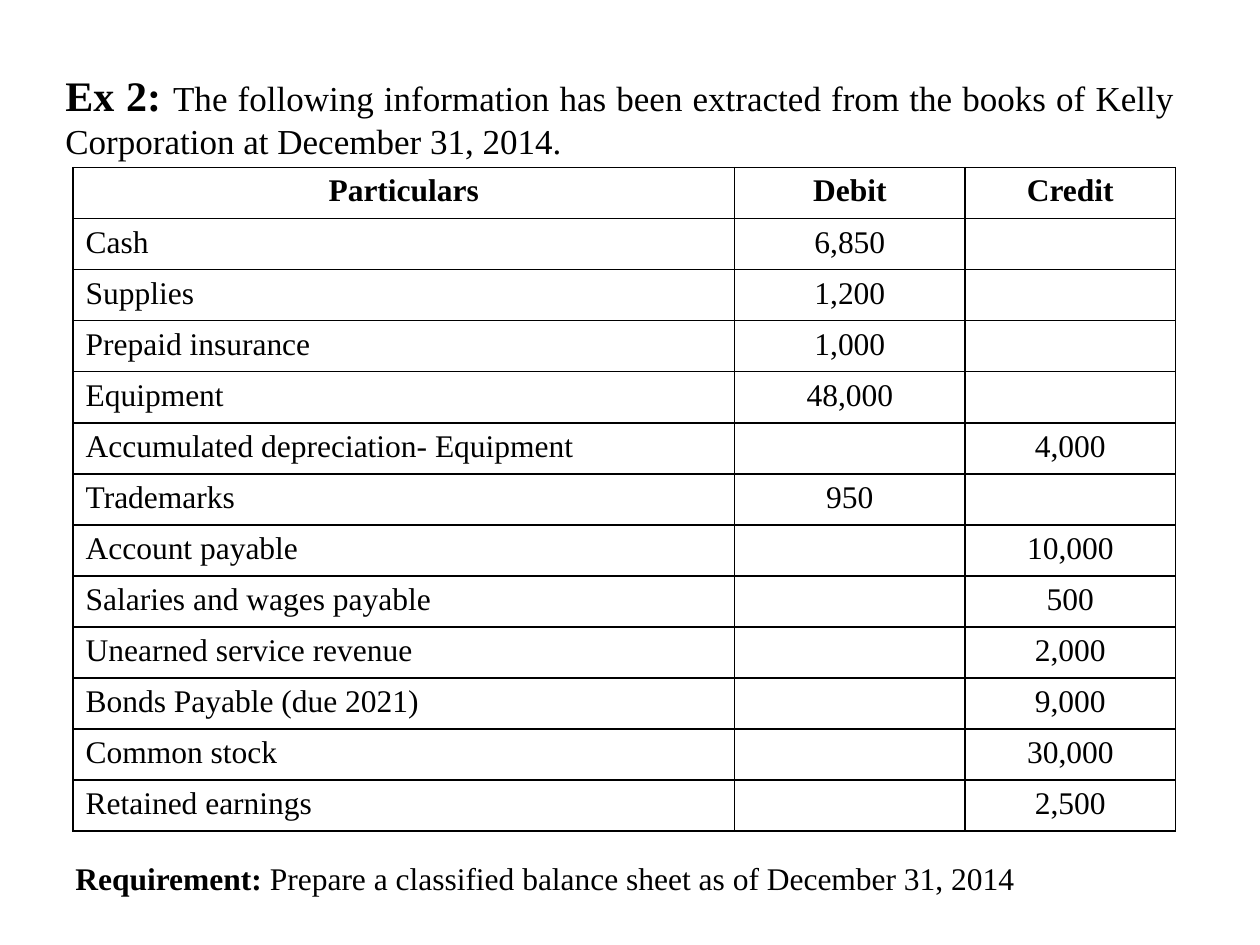
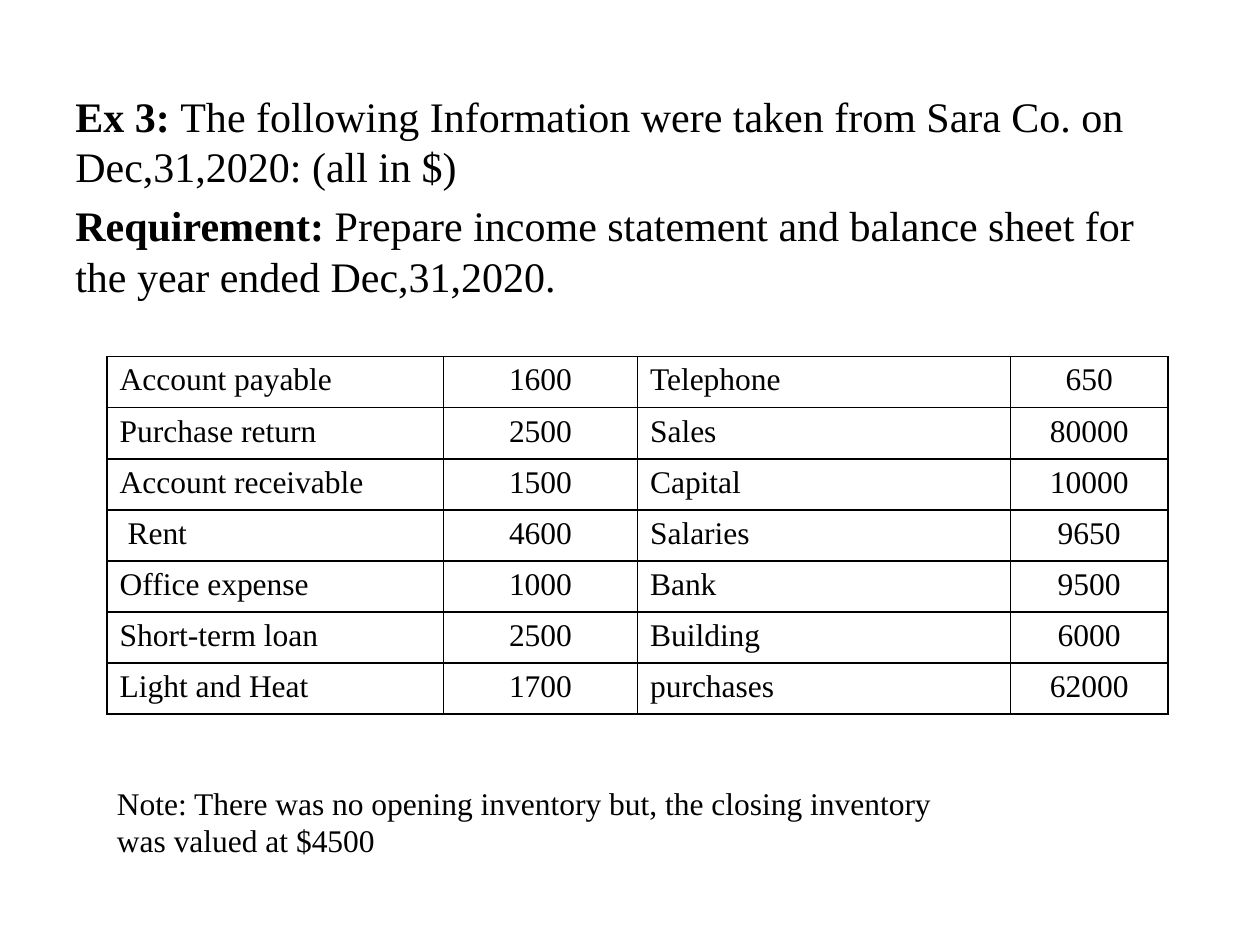
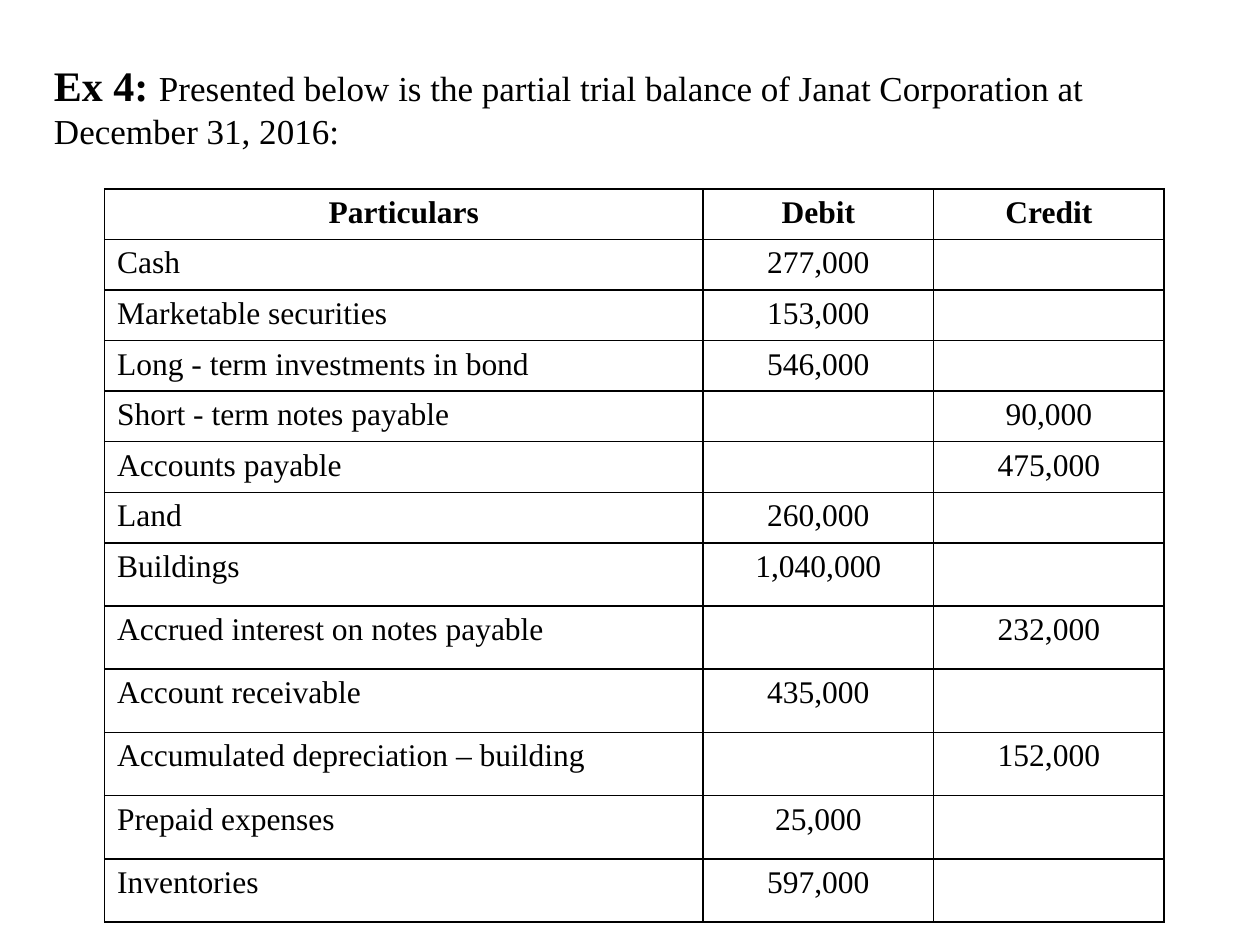
import pptx
import pptx.dml.color
import pptx.enum.text
import pptx.util
from lxml import etree

WIDTH, HEIGHT = 10, 7.5
FONT = "Times New Roman"
INK, PAPER = "000000", "FFFFFF"
LEAD, INTRO, BODY = 24, 20, 18
LEFT, CENTER, JUSTIFY = (
    pptx.enum.text.PP_ALIGN.LEFT,
    pptx.enum.text.PP_ALIGN.CENTER,
    pptx.enum.text.PP_ALIGN.JUSTIFY,
)
A = "{http://schemas.openxmlformats.org/drawingml/2006/main}"


def color(value):
    return pptx.dml.color.RGBColor.from_string(value)


def write(paragraph, text, size=BODY, bold=False, align=None):
    """Append formatted text to a paragraph."""
    if align is not None:
        paragraph.alignment = align
    run = paragraph.add_run()
    run.text = text
    run.font.name, run.font.size, run.font.bold = FONT, pptx.util.Pt(size), bold
    run.font.color.rgb = color(INK)


class Deck:
    """Holds the shared style and the current slide."""

    def __init__(self):
        self.show = pptx.Presentation()
        self.show.slide_width = pptx.util.Inches(WIDTH)
        self.show.slide_height = pptx.util.Inches(HEIGHT)

    def new_slide(self):
        self.slide = self.show.slides.add_slide(self.show.slide_layouts[6])
        self.slide.background.fill.solid()
        self.slide.background.fill.fore_color.rgb = color(PAPER)

    def text(self, box, paragraphs, align=LEFT):
        """Each paragraph is a list of (text, size, bold)."""
        frame = self.slide.shapes.add_textbox(*map(pptx.util.Inches, box)).text_frame
        frame.word_wrap = True
        for index, parts in enumerate(paragraphs):
            paragraph = frame.add_paragraph() if index else frame.paragraphs[0]
            if index:
                paragraph.space_before = pptx.util.Pt(0.2 * LEAD)
            for part in parts:
                write(paragraph, *part, align=align)

    def border(self, cell):
        properties = cell._tc.get_or_add_tcPr()
        for position, side in enumerate(("lnL", "lnR", "lnT", "lnB")):
            line = etree.Element(A + side, w=str(pptx.util.Pt(1)))
            fill = etree.SubElement(line, A + "solidFill")
            etree.SubElement(fill, A + "srgbClr", val=INK)
            properties.insert(position, line)

    def table(self, box, widths, rows, weights=None, header=True, centered=(1, 2)):
        """Row heights share the box height in proportion to their weights."""
        weights = weights or [1] * len(rows)
        grid = self.slide.shapes.add_table(
            len(rows), len(widths), *map(pptx.util.Inches, box)).table
        for column, width in zip(grid.columns, widths):
            column.width = pptx.util.Inches(width)
        for row, weight in zip(grid.rows, weights):
            row.height = pptx.util.Inches(box[3] * weight / sum(weights))
        for r, values in enumerate(rows):
            heading = header and r == 0
            for c, value in enumerate(values):
                cell = grid.cell(r, c)
                cell.fill.background()
                self.border(cell)
                paragraph = cell.text_frame.paragraphs[0]
                if value:
                    write(paragraph, value, bold=heading,
                          align=CENTER if heading or c in centered else LEFT)
                else:
                    end = etree.SubElement(paragraph._p, A + "endParaRPr", sz=str(BODY * 100))
                    etree.SubElement(end, A + "latin", typeface=FONT)


HEADINGS = ("Particulars", "Debit", "Credit")


def main():
    deck = Deck()

    # Exercise 2: classified balance sheet
    deck.new_slide()
    deck.text((0.42, 0.5, 9, 0.85), [[
        ("Ex 2: ", LEAD, True),
        ("The following information has been extracted from the books of Kelly "
         "Corporation at December 31, 2014.", INTRO)]], align=JUSTIFY)
    deck.table((0.58, 1.33, 8.75, 5.27), (5.25, 1.83, 1.67), [
        HEADINGS,
        ("Cash", "6,850", ""),
        ("Supplies", "1,200", ""),
        ("Prepaid insurance", "1,000", ""),
        ("Equipment", "48,000", ""),
        ("Accumulated depreciation- Equipment", "", "4,000"),
        ("Trademarks", "950", ""),
        ("Account payable", "", "10,000"),
        ("Salaries and wages payable", "", "500"),
        ("Unearned service revenue", "", "2,000"),
        ("Bonds Payable (due 2021)", "", "9,000"),
        ("Common stock", "", "30,000"),
        ("Retained earnings", "", "2,500"),
    ])
    deck.text((0.5, 6.77, 8.08, 0.4), [[
        ("Requirement: ", BODY, True),
        ("Prepare a classified balance sheet as of December 31, 2014", BODY)]])

    # Exercise 3: income statement and balance sheet
    deck.new_slide()
    deck.text((0.5, 0.67, 9, 1.9), [
        [("Ex 3: ", LEAD, True),
         ("The following Information were taken from Sara Co. on "
          "Dec,31,2020: (all in $)", LEAD)],
        [("Requirement: ", LEAD, True),
         ("Prepare income statement and balance sheet for the year ended "
          "Dec,31,2020.", LEAD)],
    ])
    deck.table((0.85, 2.83, 8.42, 2.84), (2.67, 1.54, 2.96, 1.25), [
        ("Account payable", "1600", "Telephone", "650"),
        ("Purchase return", "2500", "Sales", "80000"),
        ("Account receivable", "1500", "Capital", "10000"),
        (" Rent", "4600", "Salaries", "9650"),
        ("Office expense", "1000", "Bank", "9500"),
        ("Short-term loan", "2500", "Building", "6000"),
        ("Light and Heat", "1700", "purchases", "62000"),
    ], header=False, centered=(1, 3))
    deck.text((0.83, 6.17, 6.92, 0.71), [[
        ("Note: There was no opening inventory but, the closing inventory "
         "was valued at $4500", BODY)]])

    # Exercise 4: partial trial balance
    deck.new_slide()
    deck.text((0.33, 0.42, 9.08, 0.85), [[
        ("Ex 4: ", LEAD, True),
        ("Presented below is the partial trial balance of Janat Corporation at "
         "December 31, 2016:", INTRO)]])
    deck.table((0.83, 1.5, 8.42, 5.82), (4.75, 1.83, 1.83), [
        HEADINGS,
        ("Cash", "277,000", ""),
        ("Marketable securities", "153,000", ""),
        ("Long - term investments in bond", "546,000", ""),
        ("Short - term notes payable", "", "90,000"),
        ("Accounts payable", "", "475,000"),
        ("Land", "260,000", ""),
        ("Buildings", "1,040,000", ""),
        ("Accrued interest on notes payable", "", "232,000"),
        ("Account receivable", "435,000", ""),
        ("Accumulated depreciation – building", "", "152,000"),
        ("Prepaid expenses", "25,000", ""),
        ("Inventories", "597,000", ""),
    ], weights=[4] * 7 + [5] * 6)

    deck.show.save("out.pptx")


if __name__ == "__main__":
    main()
